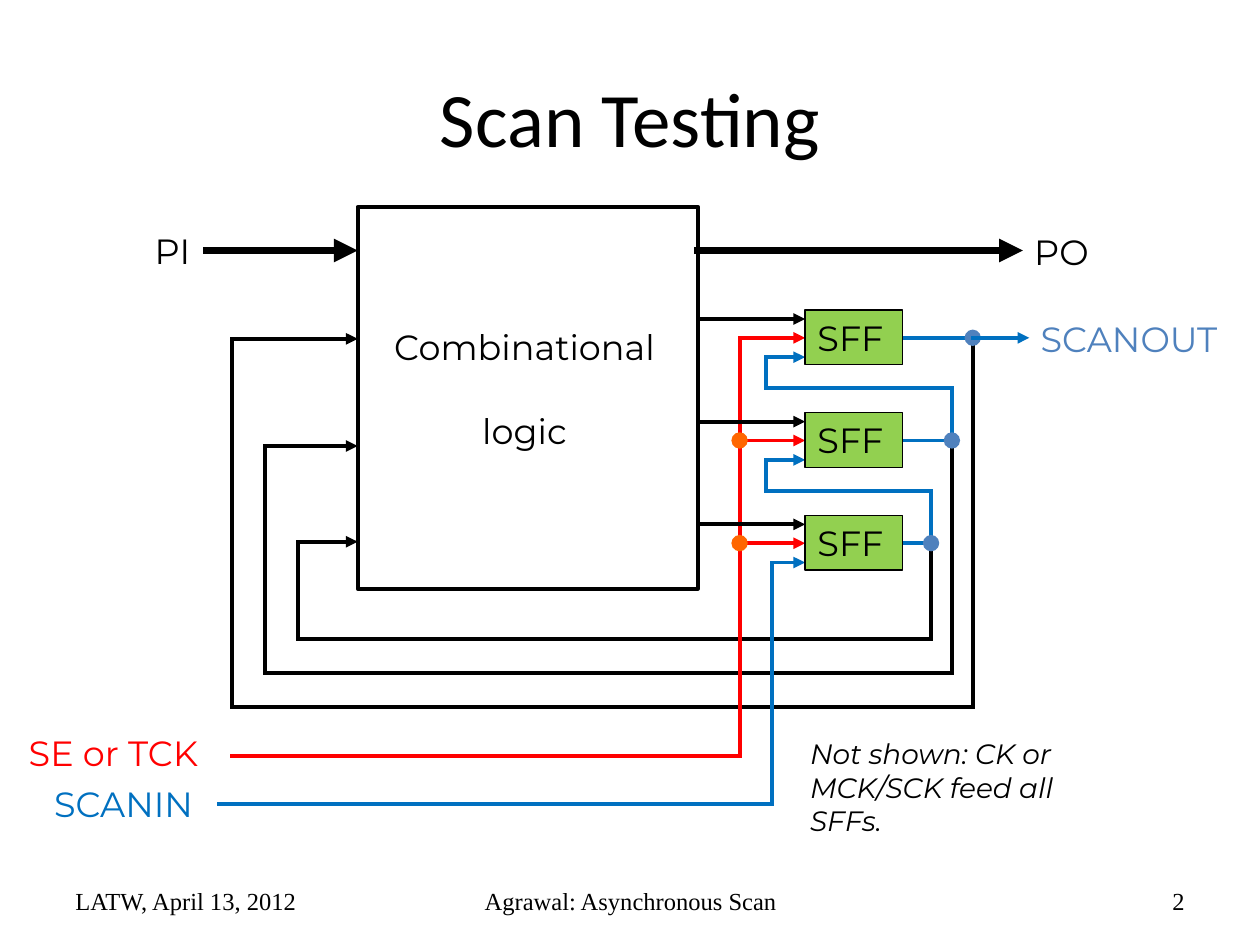
from dataclasses import dataclass

from lxml import etree
from pptx import Presentation
from pptx.dml.color import RGBColor
from pptx.enum.shapes import MSO_CONNECTOR, MSO_SHAPE
from pptx.enum.text import MSO_ANCHOR, PP_ALIGN
from pptx.oxml.ns import qn
from pptx.util import Cm, Pt

LEFT, CENTER, RIGHT = PP_ALIGN.LEFT, PP_ALIGN.CENTER, PP_ALIGN.RIGHT
TOP, MIDDLE = MSO_ANCHOR.TOP, MSO_ANCHOR.MIDDLE
RECTANGLE, OVAL = MSO_SHAPE.RECTANGLE, MSO_SHAPE.OVAL
STRAIGHT = MSO_CONNECTOR.STRAIGHT


@dataclass(frozen=True)
class Theme:
    ink: str = "000000"
    scan: str = "0070C0"
    enable: str = "FF0000"
    enable_dot: str = "FF6600"
    tap: str = "4F81BD"
    cell: str = "92D050"
    title_font: str = "Calibri"
    label_font: str = "Montserrat"
    footer_font: str = "Times New Roman"
    title_size: float = 44
    label_size: float = 20
    note_size: float = 16
    footer_size: float = 14
    wire: float = 2.25
    bus: float = 4.5
    outline: float = 0.75


@dataclass(frozen=True)
class Box:
    """A rectangle in centimetres."""
    left: float
    top: float
    width: float
    height: float

    @property
    def right(self):
        return self.left + self.width

    def inner(self, left, top, width, height):
        return Box(self.left + left, self.top + top, width, height)

    def point(self, x, y):
        return self.left + x, self.top + y

    def lengths(self):
        return Cm(self.left), Cm(self.top), Cm(self.width), Cm(self.height)


THEME = Theme()
CELL_COUNT = 3
CELL_PITCH = 2.07
BLACK_PIN, MIDDLE_PIN, SCAN_PIN = 0.18, 0.56, 0.95
DOT_SIZE = 0.33


def write(frame, text, font=THEME.label_font, size=THEME.label_size, color=THEME.ink,
          align=LEFT, anchor=TOP, italic=False, wrap=False, gap=0):
    """Fill a text frame with one paragraph a line, gap points apart."""
    frame.word_wrap = wrap
    frame.vertical_anchor = anchor
    for index, line in enumerate(text.split("\n")):
        para = frame.add_paragraph() if index else frame.paragraphs[0]
        para.alignment = align
        para.space_before = Pt(gap if index else 0)
        span = para.add_run()
        span.text = line
        span.font.name = font
        span.font.size = Pt(size)
        span.font.italic = italic
        span.font.color.rgb = RGBColor.from_string(color)


def add_label(page, box, text, **style):
    write(page.shapes.add_textbox(*box.lengths()).text_frame, text, **style)


def add_block(page, kind, box, fill=None, line=None):
    """Add a shape; line is a width in points, or None for no outline."""
    block = page.shapes.add_shape(kind, *box.lengths())
    block.shadow.inherit = False
    if fill:
        block.fill.solid()
        block.fill.fore_color.rgb = RGBColor.from_string(fill)
    else:
        block.fill.background()
    if line:
        block.line.color.rgb = RGBColor.from_string(THEME.ink)
        block.line.width = Pt(line)
    else:
        block.line.fill.background()
    return block


def add_dot(page, point, color):
    x, y = point
    half = DOT_SIZE / 2
    add_block(page, OVAL, Box(x - half, y - half, DOT_SIZE, DOT_SIZE), fill=color)


def add_wire(page, points, color=THEME.ink, width=THEME.wire, arrow=True):
    """Join the points with straight segments; the arrow sits on the last one."""
    for start, end in zip(points, points[1:]):
        wire = page.shapes.add_connector(STRAIGHT, *(Cm(n) for n in start + end))
        wire.line.color.rgb = RGBColor.from_string(color)
        wire.line.width = Pt(width)
        etree.SubElement(wire._element.spPr, qn("a:effectLst"))
        line = wire.line._get_or_add_ln()
        line.set("cap", "sq")
        if arrow and end == points[-1]:
            etree.SubElement(line, qn("a:tailEnd"), type="triangle")


def draw_title(page, box):
    title = page.shapes.title
    title.left, title.top, title.width, title.height = box.lengths()
    write(title.text_frame, "Scan Testing", font=THEME.title_font,
          size=THEME.title_size, align=CENTER, anchor=MIDDLE, wrap=True)


def draw_footer(page, box):
    parts = (("LATW, April 13, 2012", 0, 5.92, LEFT),
             ("Agrawal: Asynchronous Scan", 7.42, 8.05, CENTER),
             ("2", 16.94, 5.92, RIGHT))
    for text, left, width, align in parts:
        add_label(page, box.inner(left, 0, width, box.height), text, align=align,
                  font=THEME.footer_font, size=THEME.footer_size, anchor=MIDDLE, wrap=True)


def draw_logic(page, box):
    """Draw the logic block with its primary input and output."""
    add_block(page, RECTANGLE, box, line=THEME.wire)
    add_label(page, box.inner(0.33, 2.26, 6.07, 2.79), "Combinational\nlogic",
              align=CENTER, gap=24)
    add_wire(page, [box.point(-3.04, 0.88), box.point(0, 0.88)], width=THEME.bus)
    add_wire(page, [box.point(box.width, 0.88), box.point(13.41, 0.88)], width=THEME.bus)
    add_label(page, box.inner(-4.34, 0.33, 1.3, 1.09), "PI")
    add_label(page, box.inner(13.39, 0.35, 1.6, 1.09), "PO")


def draw_feedback(page, logic, taps):
    """Lead each tap under the logic block and back into its left side."""
    entries = (2.66, 4.82, 6.75)
    for index, (tap, entry) in enumerate(zip(taps, entries)):
        rail_x, rail_y = logic.point(-2.54 + 0.67 * index, 10.08 - 0.68 * index)
        entry_point = logic.point(0, entry)
        add_wire(page, [tap, (tap[0], rail_y), (rail_x, rail_y),
                        (rail_x, entry_point[1]), entry_point])


def draw_enable(page, box, cells):
    """Draw the red enable line, which branches to every cell."""
    bus_x, bus_y = box.point(14.91, 11.24)
    pins = [cell.point(0, MIDDLE_PIN) for cell in cells]
    add_wire(page, [box.point(4.67, 11.24), (bus_x, bus_y), (bus_x, pins[0][1]), pins[0]],
             color=THEME.enable)
    for pin in pins[1:]:
        joint = (bus_x, pin[1])
        add_wire(page, [joint, pin], color=THEME.enable)
        add_dot(page, joint, THEME.enable_dot)
    add_label(page, box.inner(0.33, 10.63, 4.45, 1.12), "SE or TCK", color=THEME.enable)


def draw_scan_path(page, box, cells, taps):
    """Draw the blue path from SCANIN through the cells to SCANOUT."""
    for cell, tap in zip(cells, taps):
        add_wire(page, [(cell.right, tap[1]), tap], color=THEME.scan, arrow=False)
    for cell, source in zip(cells, taps[1:]):
        turn_x, turn_y = cell.point(-0.78, 1.57)
        pin = cell.point(0, SCAN_PIN)
        add_wire(page, [source, (source[0], turn_y), (turn_x, turn_y),
                        (turn_x, pin[1]), pin], color=THEME.scan)
    pin = cells[-1].point(0, SCAN_PIN)
    corner = box.point(15.56, 12.2)
    add_wire(page, [box.point(4.42, 12.2), corner, (corner[0], pin[1]), pin],
             color=THEME.scan)
    for tap in taps:
        add_dot(page, tap, THEME.tap)
    add_wire(page, [taps[0], (taps[0][0] + 1.14, taps[0][1])], color=THEME.scan)
    add_label(page, box.inner(0.84, 11.65, 3.56, 1.09), "SCANIN", color=THEME.scan)
    add_label(page, box.inner(20.73, 2.27, 4.39, 1.09), "SCANOUT", color=THEME.tap)


def draw_cells(page, logic, cells):
    for cell in cells:
        pin = cell.point(0, BLACK_PIN)
        add_wire(page, [(logic.right, pin[1]), pin])
        block = add_block(page, RECTANGLE, cell, fill=THEME.cell, line=THEME.outline)
        write(block.text_frame, "SFF")


def draw_circuit(page, box):
    logic = box.inner(7.21, 0.17, 6.86, 7.7)
    cells = [box.inner(16.23, 2.25 + CELL_PITCH * i, 1.97, 1.1) for i in range(CELL_COUNT)]
    taps = [cell.point(3.38 - 0.42 * i, MIDDLE_PIN) for i, cell in enumerate(cells)]
    draw_logic(page, logic)
    draw_feedback(page, logic, taps)
    draw_enable(page, box, cells)
    draw_scan_path(page, box, cells, taps)
    draw_cells(page, logic, cells)
    add_label(page, box.inner(16.08, 10.73, 5.92, 2.29),
              "Not shown: CK or\nMCK/SCK feed all\nSFFs.",
              size=THEME.note_size, italic=True)


def main():
    deck = Presentation()
    deck.slide_width, deck.slide_height = Cm(25.4), Cm(19.05)
    page = deck.slides.add_slide(deck.slide_layouts.get_by_name("Title Only"))
    draw_title(page, Box(1.27, 0.76, 22.86, 3.18))
    draw_circuit(page, Box(0, 4, 25.4, 13.05))
    draw_footer(page, Box(1.27, 17.65, 22.86, 1.02))
    deck.save("out.pptx")


if __name__ == "__main__":
    main()
